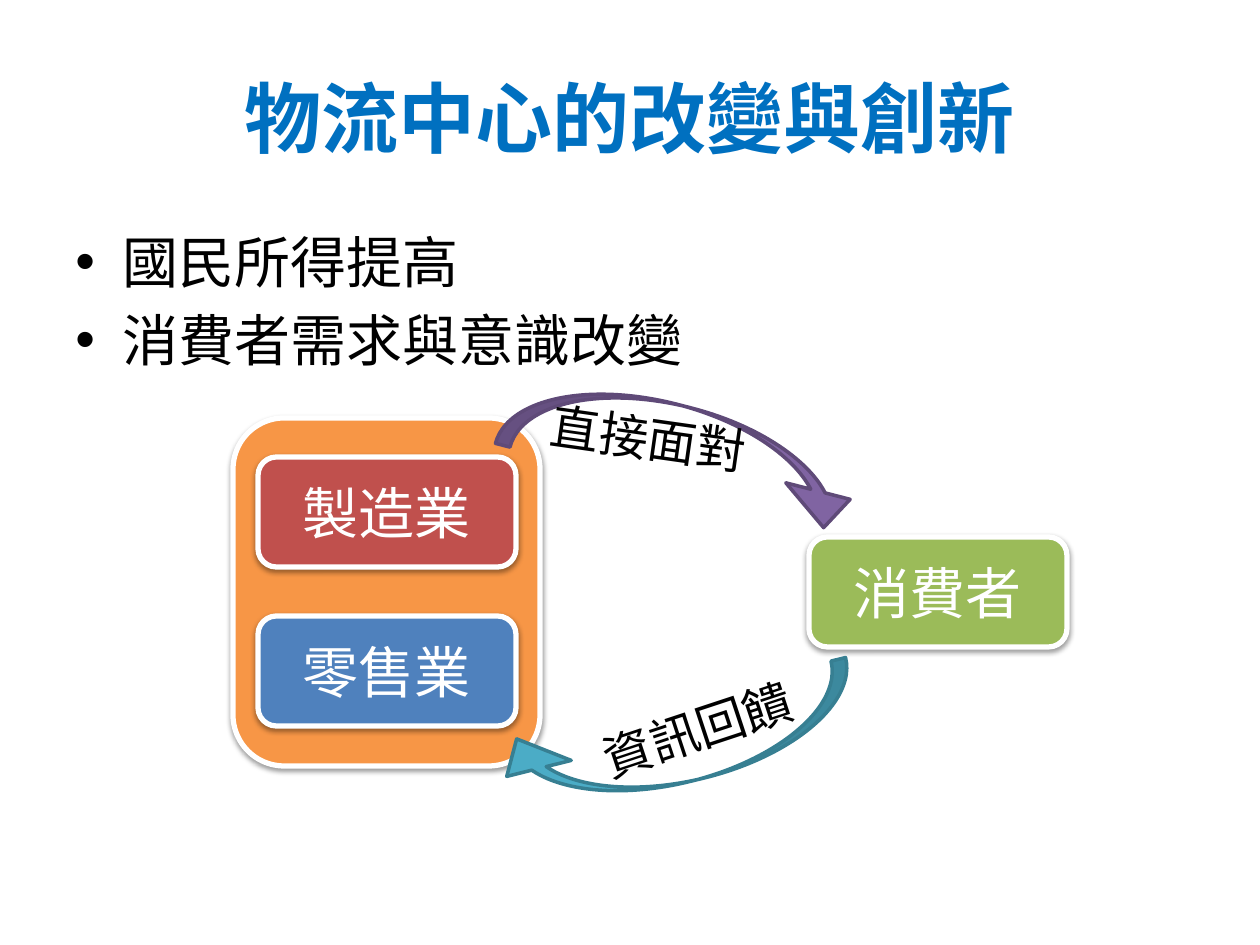
from lxml.etree import SubElement
from pptx import Presentation
from pptx.dml.color import RGBColor
from pptx.enum.shapes import MSO_SHAPE
from pptx.enum.text import MSO_ANCHOR, PP_ALIGN
from pptx.oxml.ns import qn
from pptx.util import Pt

PX = 914400 / 126
FONT = "Roboto Slab"


def px(*vals):
    return [round(v * PX) for v in vals]


def tint(color, code):
    color.rgb = RGBColor.from_string(code)


def write(shape, *lines, size=32, color="000000", bold=False,
          align=PP_ALIGN.CENTER, anchor=MSO_ANCHOR.TOP, bullet=None, gap=0):
    frame = shape.text_frame
    frame.word_wrap = True
    frame.vertical_anchor = anchor
    for i, line in enumerate(lines):
        para = frame.add_paragraph() if i else frame.paragraphs[0]
        para.alignment = align
        if i:
            para.space_before = Pt(gap)
        if bullet:
            props = para._p.get_or_add_pPr()
            indent, = px(47)
            props.set("marL", str(indent))
            props.set("indent", str(-indent))
            SubElement(props, qn("a:buFont"), typeface="Arial")
            SubElement(props, qn("a:buChar"), char=bullet)
        run = para.add_run()
        run.text = line
        font = run.font
        font.name, font.size, font.bold = FONT, Pt(size), bold
        tint(font.color, color)
        SubElement(font._element, qn("a:ea"), typeface=FONT)


def text(slide, box, *lines, turn=0, **form):
    shape = slide.shapes.add_textbox(*px(*box))
    shape.rotation = turn
    write(shape, *lines, **form)


def solid(slide, kind, box, fill, line, width):
    shape = slide.shapes.add_shape(kind, *px(*box))
    shape.shadow.inherit = False
    shape.fill.solid()
    tint(shape.fill.fore_color, fill)
    tint(shape.line.color, line)
    shape.line.width = Pt(width)
    return shape


def card(slide, box, fill, label=None):
    """Draw a white-edged rounded box with a soft shadow below it."""
    shape = solid(slide, MSO_SHAPE.ROUNDED_RECTANGLE, box, fill, "FFFFFF", 3)
    effects = shape._element.spPr.find(qn("a:effectLst"))
    shade = SubElement(effects, qn("a:outerShdw"), blurRad=str(Pt(3.1)),
                       dist=str(Pt(1.6)), dir="5400000", rotWithShape="0")
    black = SubElement(shade, qn("a:srgbClr"), val="000000")
    SubElement(black, qn("a:alpha"), val="38000")
    if label:
        write(shape, label, color="FFFFFF", anchor=MSO_ANCHOR.MIDDLE)


def arrow(slide, box, fill, line, turn, flip):
    shape = solid(slide, MSO_SHAPE.CURVED_UP_ARROW, box, fill, line, 2)
    for i, val in enumerate((0.18, 0.8, 0.41)):
        shape.adjustments[i] = val
    shape.rotation = turn
    shape._element.spPr.xfrm.set(flip, "1")


def trade(slide, x, y):
    """Draw the group of suppliers from its top left corner."""
    card(slide, (x, y, 307, 348), "F79646")
    rows = ("製造業", "C0504D"), ("零售業", "4F81BD")
    for i, (label, fill) in enumerate(rows):
        card(slide, (x + 25, y + 39 + 159 * i, 258, 110), fill, label)


def cycle(slide, x, y):
    """Draw suppliers, consumer and the two flows between them."""
    trade(slide, x, y)
    card(slide, (x + 576, y + 119, 258, 110), "9BBB59", "消費者")
    arrow(slide, (x + 256, y + 283, 372, 83), "4BACC6", "377F92",
          346.1, "flipH")
    arrow(slide, (x + 267, y - 10, 372, 83), "8064A2", "5F4A78",
          14.4, "flipV")
    text(slide, (x + 272, y - 16, 287, 72), "直接面對", size=28, turn=8.1)
    text(slide, (x + 321, y + 275, 287, 72), "資訊回饋", size=28, turn=341.6)


def main():
    deck = Presentation()
    deck.slide_width, deck.slide_height = px(1260, 945)
    slide = deck.slides.add_slide(deck.slide_layouts[6])
    text(slide, (63, 38, 1134, 158), "物流中心的改變與創新", size=44,
         color="0070C0", bold=True, anchor=MSO_ANCHOR.MIDDLE)
    text(slide, (63, 221, 1134, 624), "國民所得提高", "消費者需求與意識改變",
         align=PP_ALIGN.LEFT, bullet="•", gap=6.4)
    cycle(slide, 233, 418)
    deck.save("out.pptx")


if __name__ == "__main__":
    main()
